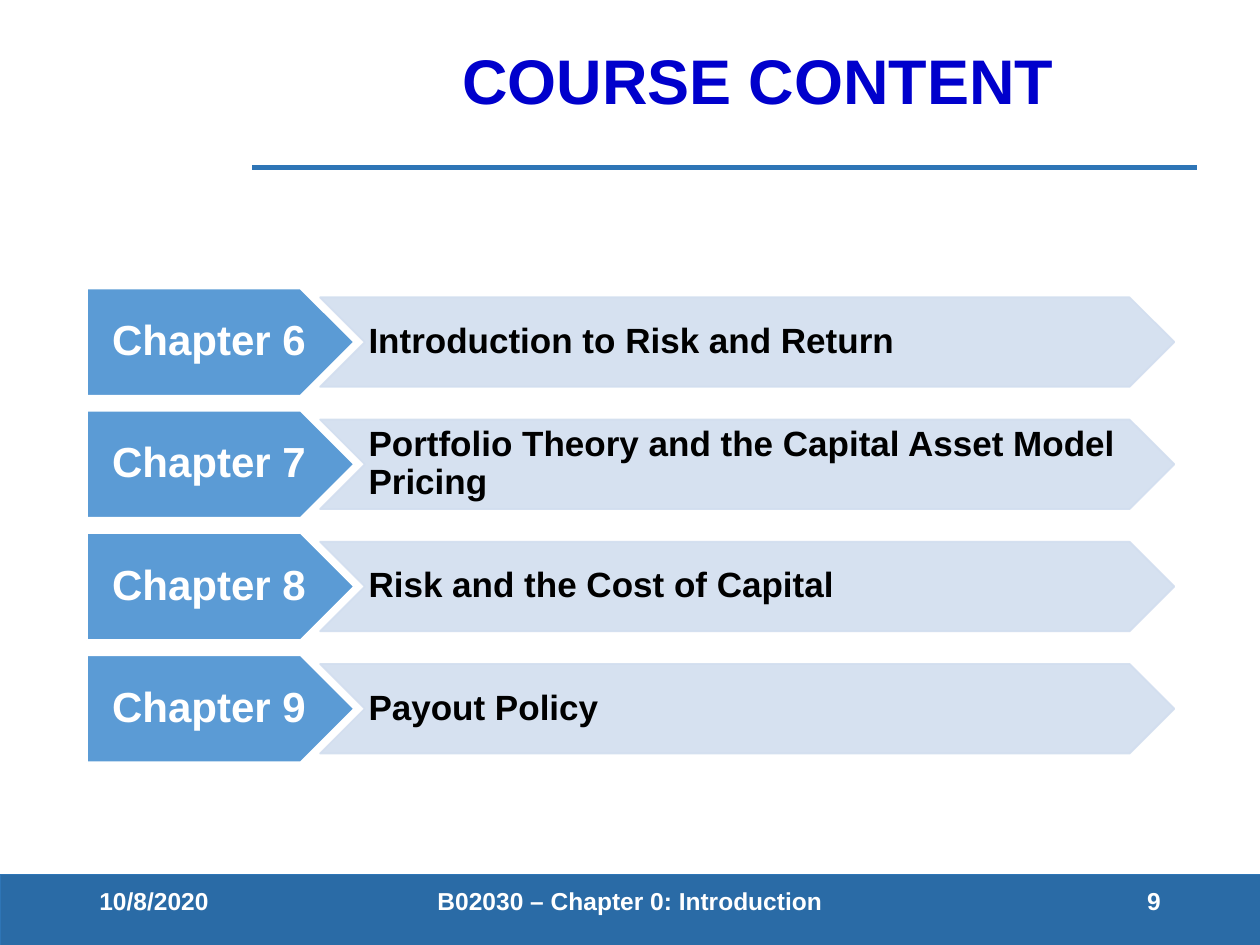
import dataclasses

import lxml.etree
import pptx
import pptx.dml.color
import pptx.enum.shapes
import pptx.enum.text
import pptx.oxml.ns
import pptx.util

Inches = pptx.util.Inches
Pt = pptx.util.Pt
Color = pptx.dml.color.RGBColor
Align = pptx.enum.text.PP_ALIGN
ShapeType = pptx.enum.shapes.MSO_SHAPE


@dataclasses.dataclass(frozen=True)
class Theme:
    font: str = "Arial"
    title: Color = Color(0x00, 0x00, 0xCC)
    rule: Color = Color(0x2E, 0x75, 0xB6)
    footer: Color = Color(0x2A, 0x6B, 0xA6)
    tag: Color = Color(0x5B, 0x9B, 0xD5)
    topic: Color = Color(0xD2, 0xDE, 0xEF)
    light: Color = Color(0xFF, 0xFF, 0xFF)
    dark: Color = Color(0x00, 0x00, 0x00)
    title_size: int = 36
    tag_size: int = 24
    topic_size: int = 20
    footer_size: int = 14
    topic_opacity: int = 90


@dataclasses.dataclass(frozen=True)
class Box:
    left: float
    top: float
    width: float
    height: float

    def lengths(self) -> tuple:
        return tuple(Inches(value) for value in dataclasses.astuple(self))


@dataclasses.dataclass(frozen=True)
class TextStyle:
    size: int
    color: Color
    alignment: Align = Align.LEFT
    line_spacing: float = 1.0


@dataclasses.dataclass(frozen=True)
class Chapter:
    number: int
    topic: str


@dataclasses.dataclass(frozen=True)
class FooterItem:
    text: str
    left: float
    width: float
    alignment: Align


THEME = Theme()
TITLE_STYLE = TextStyle(THEME.title_size, THEME.title, Align.CENTER, 0.9)
TAG_STYLE = TextStyle(THEME.tag_size, THEME.light, Align.CENTER, 0.9)
TOPIC_STYLE = TextStyle(THEME.topic_size, THEME.dark, Align.LEFT, 0.9)

CHAPTERS = [
    Chapter(6, "Introduction to Risk and Return"),
    Chapter(7, "Portfolio Theory and the Capital Asset Model Pricing"),
    Chapter(8, "Risk and the Cost of Capital"),
    Chapter(9, "Payout Policy"),
]
FIRST_ROW_TOP = 2.29
ROW_PITCH = 0.97
TAG_HEIGHT = 0.85
TOPIC_HEIGHT = 0.71

FOOTER_ITEMS = [
    FooterItem("10/8/2020", 0.69, 2.25, Align.LEFT),
    FooterItem("B02030 – Chapter 0: Introduction", 3.31, 3.38, Align.CENTER),
    FooterItem("9", 7.06, 2.25, Align.RIGHT),
]


def write_text(shape, text: str, style: TextStyle) -> None:
    frame = shape.text_frame
    frame.word_wrap = True
    frame.vertical_anchor = pptx.enum.text.MSO_ANCHOR.MIDDLE
    paragraph = frame.paragraphs[0]
    paragraph.text = text
    paragraph.alignment = style.alignment
    paragraph.line_spacing = style.line_spacing
    paragraph.font.name = THEME.font
    paragraph.font.size = Pt(style.size)
    paragraph.font.bold = True
    paragraph.font.color.rgb = style.color


def add_label(slide, box: Box, text: str, style: TextStyle) -> None:
    write_text(slide.shapes.add_textbox(*box.lengths()), text, style)


def add_block(slide, kind: ShapeType, box: Box, fill: Color, line: Color):
    shape = slide.shapes.add_shape(kind, *box.lengths())
    shape.shadow.inherit = False
    shape.fill.solid()
    shape.fill.fore_color.rgb = fill
    shape.line.color.rgb = line
    shape.line.width = Pt(1)
    return shape


def set_margins(shape, vertical: float) -> None:
    frame = shape.text_frame
    frame.margin_left, frame.margin_right = Inches(0.03), Inches(0)
    frame.margin_top = frame.margin_bottom = Inches(vertical)


def set_opacity(shape, percent: int) -> None:
    properties = shape.element.spPr
    for color in properties.iter(pptx.oxml.ns.qn("a:srgbClr")):
        alpha = lxml.etree.SubElement(color, pptx.oxml.ns.qn("a:alpha"))
        alpha.set("val", str(percent * 1000))


def add_chapter(slide, chapter: Chapter, top: float) -> None:
    tag_box = Box(0.69, top, 2.12, TAG_HEIGHT)
    tag = add_block(slide, ShapeType.PENTAGON, tag_box, THEME.tag, THEME.light)
    set_margins(tag, 0.02)
    write_text(tag, f"Chapter {chapter.number}", TAG_STYLE)

    topic_top = top + (TAG_HEIGHT - TOPIC_HEIGHT) / 2
    topic_box = Box(2.54, topic_top, 6.78, TOPIC_HEIGHT)
    topic = add_block(slide, ShapeType.CHEVRON, topic_box, THEME.topic, THEME.topic)
    set_opacity(topic, THEME.topic_opacity)
    set_margins(topic, 0.01)
    write_text(topic, chapter.topic, TOPIC_STYLE)


def add_title_rule(slide) -> None:
    rule = slide.shapes.add_connector(
        pptx.enum.shapes.MSO_CONNECTOR.STRAIGHT,
        Inches(2), Inches(1.33), Inches(9.5), Inches(1.33),
    )
    rule.line.color.rgb = THEME.rule
    rule.line.width = Pt(3)
    lxml.etree.SubElement(rule.element.spPr, pptx.oxml.ns.qn("a:effectLst"))


def main() -> None:
    presentation = pptx.Presentation()
    presentation.slide_width = Inches(10)
    presentation.slide_height = Inches(7.5)
    slide = presentation.slides.add_slide(presentation.slide_layouts[6])

    footer_box = Box(0, 6.94, 10.04, 0.58)
    add_block(slide, ShapeType.RECTANGLE, footer_box, THEME.footer, THEME.rule)
    add_title_rule(slide)
    add_label(slide, Box(2, 0, 8.03, 1.33), "COURSE CONTENT", TITLE_STYLE)

    for row, chapter in enumerate(CHAPTERS):
        add_chapter(slide, chapter, FIRST_ROW_TOP + row * ROW_PITCH)

    for item in FOOTER_ITEMS:
        style = TextStyle(THEME.footer_size, THEME.light, item.alignment)
        add_label(slide, Box(item.left, 6.95, item.width, 0.4), item.text, style)

    presentation.save("out.pptx")


if __name__ == "__main__":
    main()
